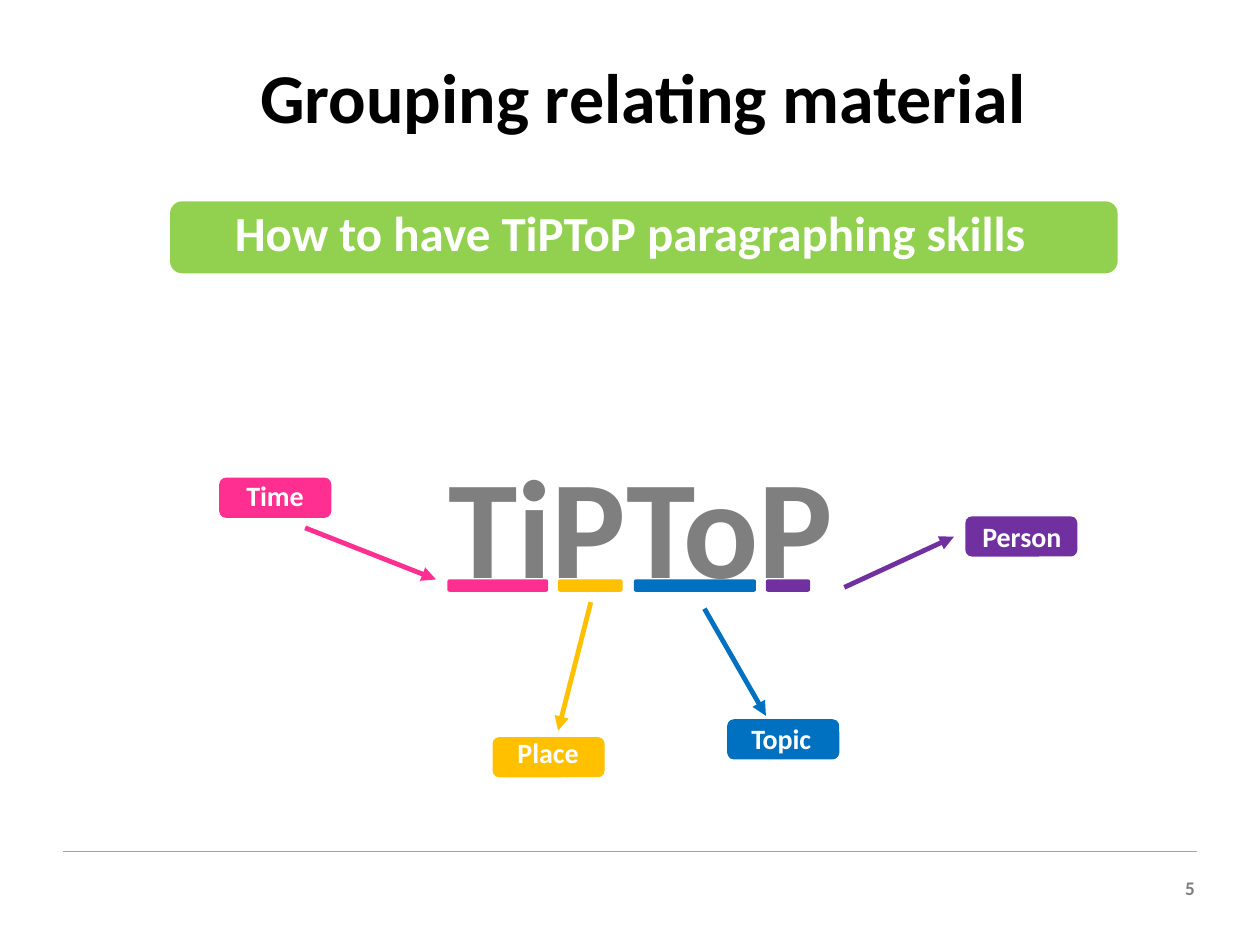
from lxml import etree
from pptx import Presentation
from pptx.dml.color import RGBColor
from pptx.enum.shapes import MSO_CONNECTOR, MSO_SHAPE
from pptx.enum.text import MSO_ANCHOR, PP_ALIGN
from pptx.oxml.ns import qn
from pptx.util import Cm, Pt

STRAIGHT = MSO_CONNECTOR.STRAIGHT
ROUNDED = MSO_SHAPE.ROUNDED_RECTANGLE
TOP, MIDDLE = MSO_ANCHOR.TOP, MSO_ANCHOR.MIDDLE
LEFT, CENTER, RIGHT = PP_ALIGN.LEFT, PP_ALIGN.CENTER, PP_ALIGN.RIGHT

BLACK = RGBColor(0x00, 0x00, 0x00)
WHITE = RGBColor(0xFF, 0xFF, 0xFF)
GRAY = RGBColor(0x7F, 0x7F, 0x7F)
RULE_GRAY = RGBColor(0xA5, 0xA5, 0xA5)
GREEN = RGBColor(0x92, 0xD0, 0x50)
PINK = RGBColor(0xFF, 0x2F, 0x92)
AMBER = RGBColor(0xFF, 0xC0, 0x00)
BLUE = RGBColor(0x00, 0x70, 0xC0)
PURPLE = RGBColor(0x70, 0x30, 0xA0)

BAR_TOP, BAR_HEIGHT = 11.68, 0.25
LABEL_WIDTH, LABEL_HEIGHT = 2.26, 0.81
CAPTION_HEIGHT = 0.94

UNDERLINES = [
    (PINK, 9.02, 2.03),
    (AMBER, 11.25, 1.3),
    (BLUE, 12.78, 2.46),
    (PURPLE, 15.44, 0.89),
]
ARROWS = [
    (PINK, (6.15, 10.64), (8.79, 11.68)),
    (AMBER, (11.91, 12.14), (11.25, 14.73)),
    (BLUE, (14.2, 12.27), (15.44, 14.43)),
    (PURPLE, (17.02, 11.84), (19.23, 10.82)),
]
LABELS = [
    ("Time", PINK, (4.42, 9.63), (4.62, 9.53), 1.85),
    ("Place", AMBER, (9.93, 14.86), (10.06, 14.71), 1.98),
    ("Topic", BLUE, (14.66, 14.5), (14.76, 14.43), 1.98),
    ("Person", PURPLE, (19.46, 10.41), (19.51, 10.34), 2.18),
]


def write_text(shape, text, *, size, color, font, align=CENTER, anchor=TOP, spacing=None):
    frame = shape.text_frame
    frame.word_wrap = True
    frame.vertical_anchor = anchor
    paragraph = frame.paragraphs[0]
    paragraph.alignment = align
    paragraph.line_spacing = spacing
    run = paragraph.add_run()
    run.text = text
    run.font.name = font
    run.font.size = Pt(size)
    run.font.bold = True
    run.font.color.rgb = color


class SlideBuilder:
    def __init__(self, slide, font):
        self.slide = slide
        self.font = font

    def text(self, text, left, top, width, height, **text_format):
        box = self.slide.shapes.add_textbox(Cm(left), Cm(top), Cm(width), Cm(height))
        write_text(box, text, font=self.font, **text_format)

    def rounded_box(self, color, left, top, width, height):
        shape = self.slide.shapes.add_shape(ROUNDED, Cm(left), Cm(top), Cm(width), Cm(height))
        shape.shadow.inherit = False
        shape.fill.solid()
        shape.fill.fore_color.rgb = color
        shape.line.fill.background()

    def line(self, color, start, end, width, arrow=False):
        points = [Cm(value) for value in (*start, *end)]
        connector = self.slide.shapes.add_connector(STRAIGHT, *points)
        connector.line.color.rgb = color
        connector.line.width = Pt(width)
        if arrow:
            outline = connector.line._get_or_add_ln()
            etree.SubElement(outline, qn("a:tailEnd"), type="triangle")
        etree.SubElement(connector._element.spPr, qn("a:effectLst"))


def main():
    presentation = Presentation()
    presentation.slide_width = Cm(25.4)
    presentation.slide_height = Cm(19.05)
    slide = presentation.slides.add_slide(presentation.slide_layouts[6])
    builder = SlideBuilder(slide, "Calibri")

    builder.text("5", 23.37, 17.55, 0.97, 0.74, size=11, color=GRAY, align=RIGHT)
    builder.line(RULE_GRAY, (1.27, 17.17), (24.13, 17.17), 0.75)
    builder.text("Grouping relating material", 1.14, 1.3, 23.65, 1.45,
                 size=40, color=BLACK, anchor=MIDDLE, spacing=0.9)
    builder.rounded_box(GREEN, 3.43, 4.06, 19.1, 1.45)
    builder.text("How to have TiPToP paragraphing skills", 3.15, 3.96, 19.1, 0.81,
                 size=28, color=WHITE)
    builder.text("TiPToP", 8.79, 8.71, 8.36, 3.68, size=80, color=GRAY, align=LEFT)

    for color, left, width in UNDERLINES:
        builder.rounded_box(color, left, BAR_TOP, width, BAR_HEIGHT)
    for color, start, end in ARROWS:
        builder.line(color, start, end, 2.75, arrow=True)
    for caption, color, box_corner, text_corner, text_width in LABELS:
        builder.rounded_box(color, *box_corner, LABEL_WIDTH, LABEL_HEIGHT)
        builder.text(caption, *text_corner, text_width, CAPTION_HEIGHT, size=16, color=WHITE)

    presentation.save("out.pptx")


if __name__ == "__main__":
    main()
